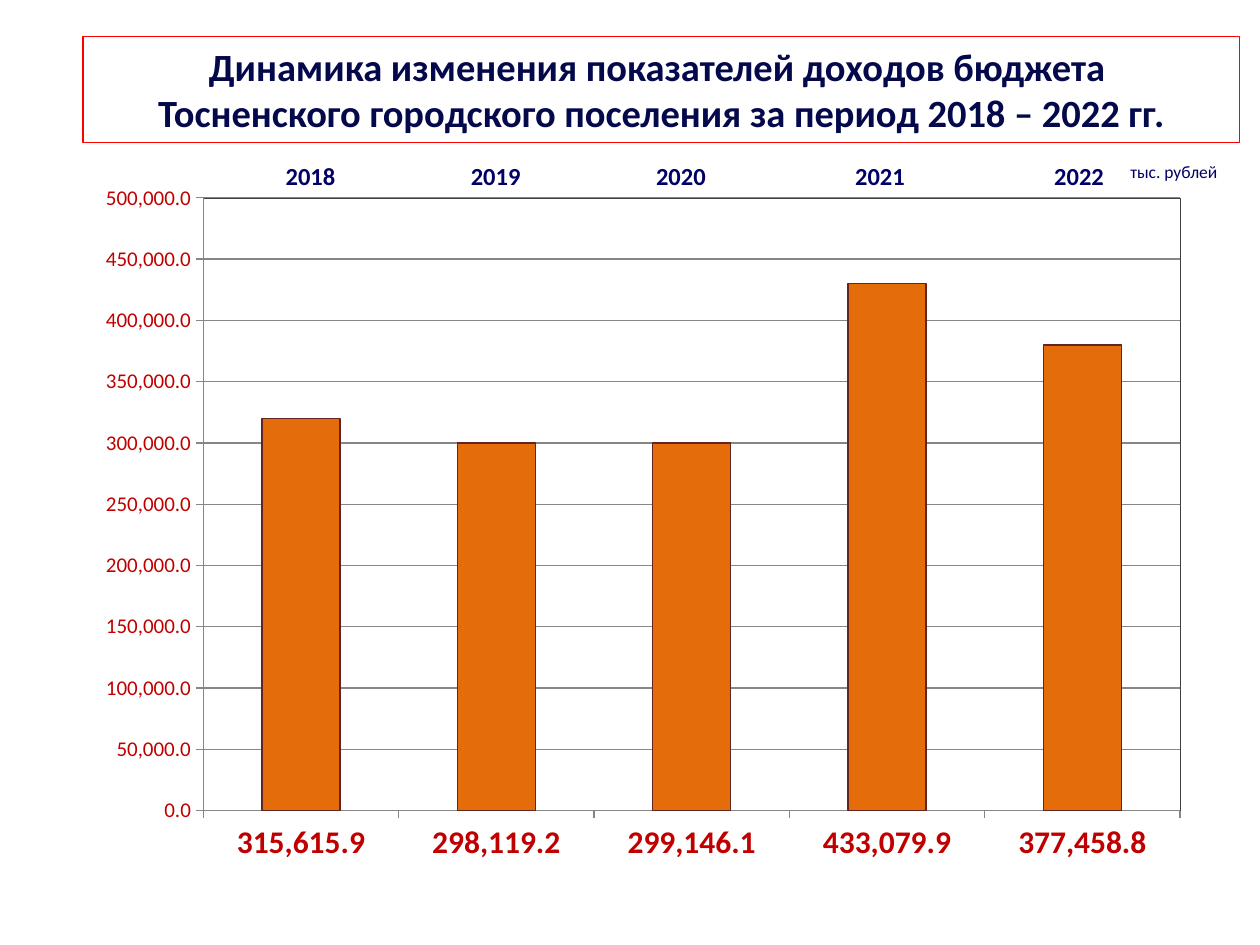
"""Build the slide on budget revenue by year as a column chart."""
from lxml import etree
from pptx import Presentation
from pptx.chart.data import CategoryChartData
from pptx.dml.color import RGBColor
from pptx.enum.chart import XL_CHART_TYPE, XL_TICK_MARK
from pptx.enum.shapes import MSO_SHAPE
from pptx.enum.text import MSO_ANCHOR, PP_ALIGN
from pptx.oxml import parse_xml
from pptx.oxml.ns import nsdecls, qn
from pptx.util import Inches, Pt

COLUMN = XL_CHART_TYPE.COLUMN_CLUSTERED
OUTSIDE, NO_TICK = XL_TICK_MARK.OUTSIDE, XL_TICK_MARK.NONE
RECT, MIDDLE = MSO_SHAPE.RECTANGLE, MSO_ANCHOR.MIDDLE
CENTER, RIGHT = PP_ALIGN.CENTER, PP_ALIGN.RIGHT

FONT = "Calibri"
TITLE = ("Динамика изменения показателей доходов бюджета \n"
         "Тосненского городского поселения за период 2018 – 2022 гг.")
UNIT = "тыс. рублей"
REVENUE = [("315,615.9", 320000), ("298,119.2", 300000), ("299,146.1", 300000),
           ("433,079.9", 430000), ("377,458.8", 380000)]
YEARS = [("2018", 2.09, 0.67), ("2019", 3.58, 0.65), ("2020", 5.08, 0.62),
         ("2021", 6.57, 0.71), ("2022", 8.15, 0.71)]
PLOT = {"x": 0.107, "y": 0.018, "w": 0.879, "h": 0.87}
TITLE_FONT = {"size": Pt(22), "bold": True, "color": "04094C"}
YEAR_FONT = {"size": Pt(14), "bold": True, "color": "000066"}
UNIT_FONT = {"size": Pt(10), "bold": False, "color": "000066"}
CAT_FONT = {"size": Pt(18), "bold": True, "color": "C00000"}
VAL_FONT = {"size": Pt(12), "bold": False, "color": "C00000"}


def rgb(value):
    return RGBColor.from_string(value)


def set_font(font, fmt):
    font.name = FONT
    for key, value in fmt.items():
        if key == "color":
            font.color.rgb = rgb(value)
        else:
            setattr(font, key, value)


def set_line(line, color):
    line.color.rgb = rgb(color)
    line.width = Pt(0.75)


def write(sp, text, fmt, align):
    tf = sp.text_frame
    tf.word_wrap = True
    p = tf.paragraphs[0]
    p.text = text
    p.alignment = align
    for r in p.runs:
        set_font(r.font, fmt)


def add_title(s):
    sp = s.shapes.add_shape(RECT, *map(Inches, (0.66, 0.29, 9.18, 0.84)))
    sp.shadow.inherit = False
    sp.fill.solid()
    sp.fill.fore_color.rgb = rgb("FFFFFF")
    color = sp.fill._xPr.find(qn("a:solidFill"))[0]
    etree.SubElement(color, qn("a:alpha"), val="52000")
    set_line(sp.line, "FF0000")
    sp.text_frame.vertical_anchor = MIDDLE
    write(sp, TITLE, TITLE_FONT, CENTER)


def add_label(s, text, left, width, height, fmt):
    box = s.shapes.add_textbox(*map(Inches, (left, 1.23, width, height)))
    write(box, text, fmt, RIGHT)


def frame_plot(chart):
    area = chart._chartSpace.chart.plotArea
    for old in area.findall(qn("c:layout")):
        area.remove(old)
    sizes = "".join(f'<c:{k} val="{v}"/>' for k, v in PLOT.items())
    area.insert(0, parse_xml(
        f'<c:layout {nsdecls("c")}><c:manualLayout><c:layoutTarget val="inner"/>'
        f'<c:xMode val="edge"/><c:yMode val="edge"/>{sizes}'
        '</c:manualLayout></c:layout>'))
    area.append(parse_xml(
        f'<c:spPr {nsdecls("c", "a")}><a:noFill/><a:ln w="3175"><a:solidFill>'
        '<a:srgbClr val="404040"/></a:solidFill></a:ln></c:spPr>'))


def add_revenue_chart(s):
    data = CategoryChartData(number_format="#,##0.0")
    labels, values = zip(*REVENUE)
    data.categories = labels
    data.add_series("Series 1", values)
    place = map(Inches, (0.67, 1.47, 8.82, 5.59))
    chart = s.shapes.add_chart(COLUMN, *place, data).chart
    chart.has_legend = chart.has_title = False
    set_font(chart.font, CAT_FONT)
    plot = chart.plots[0]
    plot.gap_width = 150
    plot.vary_by_categories = False
    bars = plot.series[0].format
    bars.fill.solid()
    bars.fill.fore_color.rgb = rgb("E46C0A")
    set_line(bars.line, "632523")
    val = chart.value_axis
    val.minimum_scale, val.maximum_scale, val.major_unit = 0, 500000, 50000
    val.tick_labels.number_format = "#,##0.0"
    val.tick_labels.number_format_is_linked = False
    val.has_major_gridlines = True
    set_line(val.major_gridlines.format.line, "868686")
    for axis, fmt in ((chart.category_axis, CAT_FONT), (val, VAL_FONT)):
        axis.major_tick_mark, axis.minor_tick_mark = OUTSIDE, NO_TICK
        set_line(axis.format.line, "868686")
        set_font(axis.tick_labels.font, fmt)
    frame_plot(chart)


def main():
    prs = Presentation()
    prs.slide_width, prs.slide_height = Inches(10), Inches(7.5)
    s = prs.slides.add_slide(prs.slide_layouts[6])
    add_title(s)
    add_revenue_chart(s)
    add_label(s, UNIT, 8.86, 0.9, 0.27, UNIT_FONT)
    for year, left, width in YEARS:
        add_label(s, year, left, width, 0.34, YEAR_FONT)
    prs.save("out.pptx")


if __name__ == "__main__":
    main()
